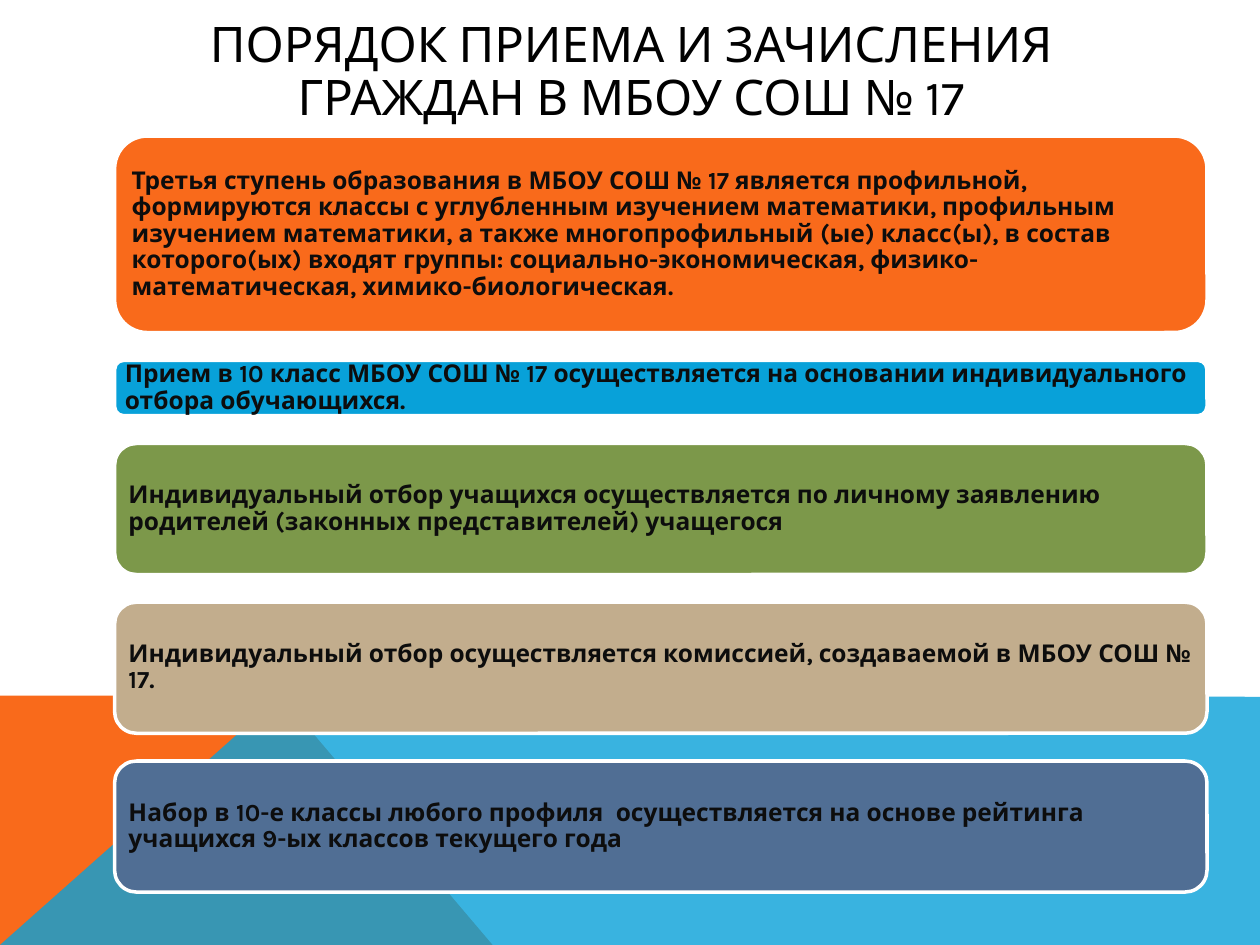
from lxml import etree
from pptx import Presentation
from pptx.dml.color import RGBColor
from pptx.enum.shapes import MSO_SHAPE
from pptx.enum.text import MSO_ANCHOR, PP_ALIGN
from pptx.oxml.ns import qn
from pptx.util import Inches, Pt

COLORS = {
    "orange": "F96A1B", "blue": "08A1D9", "green": "7C984A", "sand": "C2AD8D",
    "navy": "506E94", "white": "FFFFFF", "ink": "0D0D0D", "black": "000000",
}
FONT = "Karla"


def paint(shape, color):
    shape.shadow.inherit = False
    shape.fill.solid()
    shape.fill.fore_color.rgb = RGBColor.from_string(COLORS[color])


def write(shape, text, size, color, bold, align):
    para = shape.text_frame.paragraphs[0]
    para.text = text
    para.alignment = align
    para.line_spacing = 0.9
    para.font.name = FONT
    para.font.size = Pt(size)
    para.font.bold = bold
    para.font.color.rgb = RGBColor.from_string(COLORS[color])


deck = Presentation()
deck.slide_width, deck.slide_height = Inches(10), Inches(7.5)
page = deck.slides.add_slide(deck.slide_layouts[6])

# Bottom background: orange wedge under a translucent blue one
wedges = [
    ("orange", 100, [(0, 7.5), (0, 5.52), (2.23, 5.52), (3.91, 7.5)]),
    ("blue", 80, [(0, 7.5), (2.23, 5.52), (10, 5.53), (10, 7.5)]),
]
for color, opacity, points in wedges:
    start, *others = [(Inches(x), Inches(y)) for x, y in points]
    builder = page.shapes.build_freeform(*start)
    builder.add_line_segments(others, close=True)
    wedge = builder.convert_to_shape()
    paint(wedge, color)
    wedge.line.fill.background()
    if opacity < 100:
        fill_color = wedge._element.spPr.find(qn("a:solidFill"))[0]
        etree.SubElement(fill_color, qn("a:alpha"), val=str(opacity * 1000))

# Rounded cards, stacked with equal gaps
cards = [
    ("orange", 1.56, "Третья ступень образования в МБОУ СОШ № 17 является профильной, "
     "формируются классы с углубленным изучением математики, профильным изучением "
     "математики, а также многопрофильный (ые) класс(ы), в состав которого(ых) входят "
     "группы: социально-экономическая, физико-математическая, химико-биологическая."),
    ("blue", 0.44, "Прием в 10 класс МБОУ СОШ № 17 осуществляется на основании "
     "индивидуального отбора обучающихся."),
    ("green", 1.04, "Индивидуальный отбор учащихся осуществляется по личному заявлению "
     "родителей (законных представителей) учащегося"),
    ("sand", 1.04, "Индивидуальный отбор осуществляется комиссией, создаваемой в "
     "МБОУ СОШ № 17."),
    ("navy", 1.04, "Набор в 10-е классы любого профиля  осуществляется на основе "
     "рейтинга учащихся 9-ых классов текущего года"),
]
GAP = 0.22
top = 1.08
for color, height, text in cards:
    card = page.shapes.add_shape(MSO_SHAPE.ROUNDED_RECTANGLE, Inches(0.91), Inches(top),
                                 Inches(8.67), Inches(height))
    paint(card, color)
    card.line.color.rgb = RGBColor.from_string(COLORS["white"])
    card.line.width = Pt(2)
    frame = card.text_frame
    frame.word_wrap = True
    frame.vertical_anchor = MSO_ANCHOR.MIDDLE
    frame.margin_left = frame.margin_right = Inches(0.06)
    frame.margin_top = frame.margin_bottom = Inches(0.06)
    write(card, text, 14, "ink", True, PP_ALIGN.LEFT)
    top += height + GAP

# Title, growing upwards from the bottom of its box
title = page.shapes.add_textbox(Inches(0.9), Inches(0.4), Inches(8.22), Inches(0.6))
title.text_frame.word_wrap = True
title.text_frame.vertical_anchor = MSO_ANCHOR.BOTTOM
title.text_frame.margin_bottom = 0
write(title, "ПОРЯДОК ПРИЕМА И ЗАЧИСЛЕНИЯ ГРАЖДАН В МБОУ СОШ № 17", 28, "black",
      False, PP_ALIGN.CENTER)

deck.save("out.pptx")
